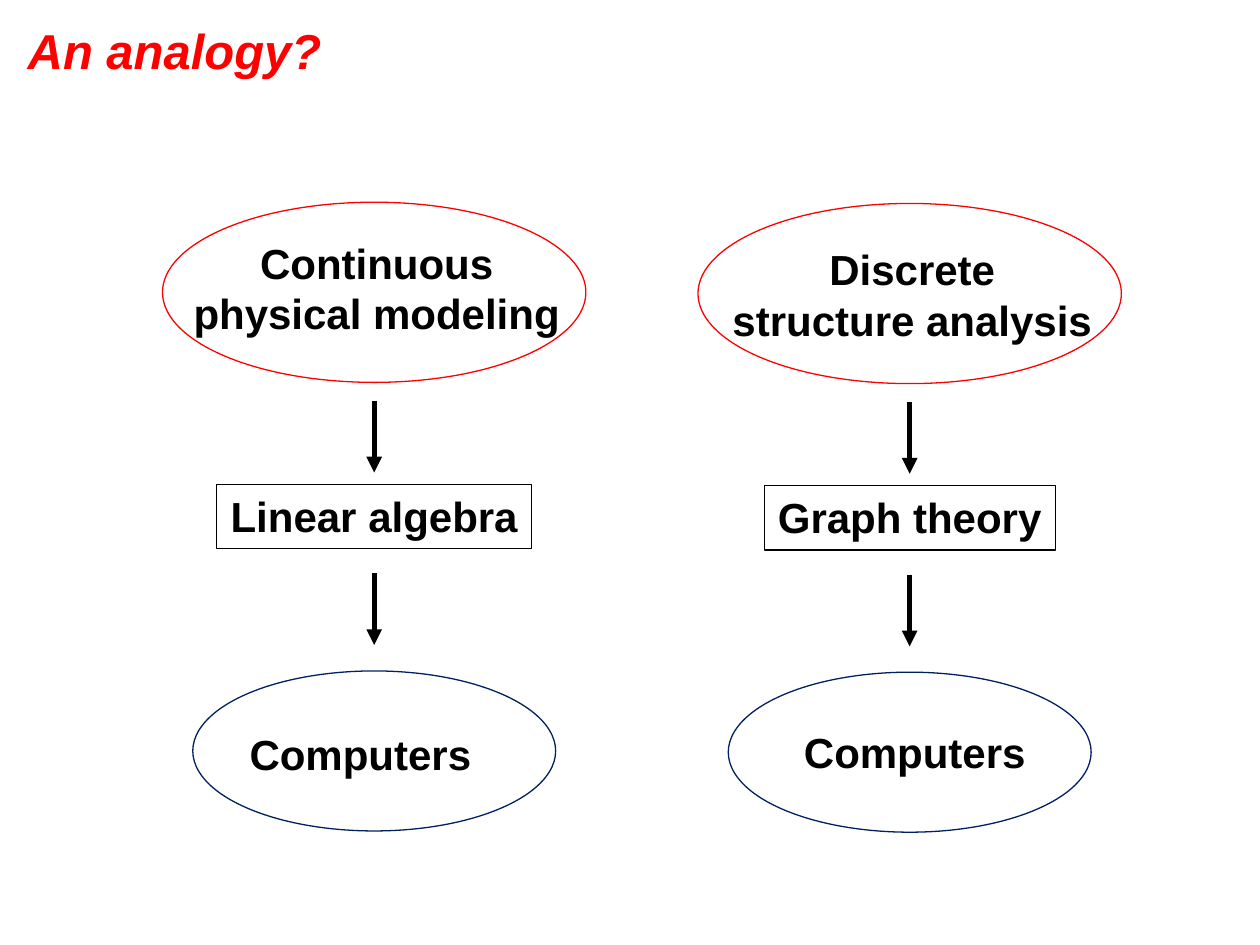
from lxml import etree
from pptx import Presentation
from pptx import util as u
from pptx.dml.color import RGBColor
from pptx.enum import shapes, text
from pptx.oxml.ns import qn

COLORS = {"red": "FF0000", "navy": "002060", "black": "000000"}
FONT = "Arial"

prs = Presentation()
prs.slide_width, prs.slide_height = u.Inches(10), u.Inches(7.5)
s = prs.slides.add_slide(prs.slide_layouts[5])


def add_text(sp, lines, size, color="black", italic=False):
    p = sp.text_frame.paragraphs[0]
    for i, line in enumerate(lines):
        if i:
            p.add_line_break()
        r = p.add_run()
        r.text = line
        r.font.name, r.font.size = FONT, u.Pt(size)
        r.font.bold, r.font.italic = True, italic
        r.font.color.rgb = RGBColor.from_string(COLORS[color])
    return p


def add_box(group, kind, cx, cy, w, h, color=None, lines=()):
    """Add an unfilled shape centred on (cx, cy), or a text box if kind is None."""
    at = [u.Inches(v) for v in (cx - w / 2, cy - h / 2, w, h)]
    if kind is None:
        sp = group.shapes.add_textbox(*at)
    else:
        sp = group.shapes.add_shape(kind, *at)
        sp.shadow.inherit = False
        sp.fill.background()
        sp.line.color.rgb = RGBColor.from_string(COLORS[color])
        sp.line.width = u.Pt(0.75)
    if lines:
        tf = sp.text_frame
        tf.word_wrap = False
        tf.auto_size = text.MSO_AUTO_SIZE.SHAPE_TO_FIT_TEXT
        tf.vertical_anchor = text.MSO_ANCHOR.TOP
        add_text(sp, lines, 24).alignment = text.PP_ALIGN.CENTER


title = s.shapes.title
title.left, title.top = u.Inches(0.12), u.Inches(0.12)
title.width, title.height = u.Inches(8.88), u.Inches(0.56)
title.text_frame.vertical_anchor = text.MSO_ANCHOR.MIDDLE
add_text(title, ["An analogy?"], 28, "red", True).alignment = text.PP_ALIGN.LEFT

OVAL, RECT = shapes.MSO_SHAPE.OVAL, shapes.MSO_SHAPE.RECTANGLE
# centre x, vertical shift, field (lines, x, y, w), tool (name, w), computers (x, y)
columns = [
    (2.97, 0, (["Continuous", "physical modeling"], 2.99, 2.29, 3.14),
     ("Linear algebra", 2.5), (2.86, 5.99)),
    (7.22, 0.01, (["Discrete", "structure analysis"], 7.24, 2.34, 3.1),
     ("Graph theory", 2.31), (7.26, 5.97)),
]

for cx, dy, (field, fx, fy, fw), (tool, tool_w), (comp_x, comp_y) in columns:
    g = s.shapes.add_group_shape()
    add_box(g, OVAL, cx, 2.32 + dy, 3.36, 1.43, "red")
    add_box(g, OVAL, cx, 5.96 + dy, 2.88, 1.27, "navy")
    add_box(g, None, fx, fy, fw, 0.91, lines=field)
    add_box(g, RECT, cx, 4.1 + dy, tool_w, 0.51, "black", [tool])
    add_box(g, None, comp_x, comp_y, 1.98, 0.51, lines=["Computers"])
    for top in (3.18 + dy, 4.55 + dy):
        arrow = g.shapes.add_connector(
            shapes.MSO_CONNECTOR.STRAIGHT,
            u.Inches(cx), u.Inches(top), u.Inches(cx), u.Inches(top + 0.57))
        arrow.line.color.rgb = RGBColor.from_string(COLORS["black"])
        arrow.line.width = u.Pt(3)
        etree.SubElement(arrow.line._get_or_add_ln(), qn("a:tailEnd"), type="triangle")
        etree.SubElement(arrow._element.spPr, qn("a:effectLst"))

prs.save("out.pptx")
